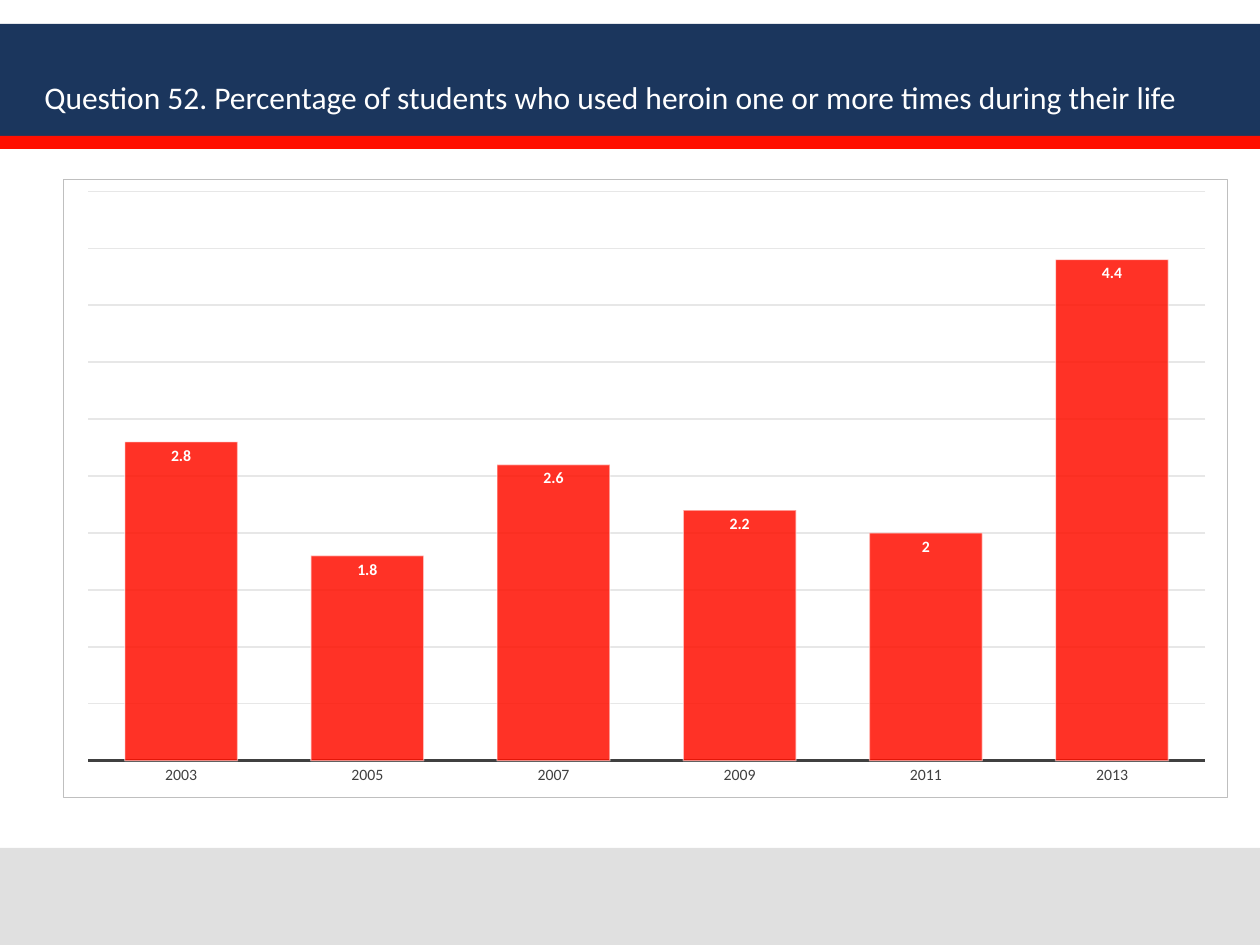
from lxml import etree
from pptx import Presentation
from pptx import util as u
from pptx.chart.data import CategoryChartData
from pptx.dml.color import RGBColor
from pptx.enum import chart as charts, shapes, text
from pptx.oxml import parse_xml
from pptx.oxml.ns import nsdecls, qn

PX = 914400 // 126
FONT = "Calibri"
TITLE = "Question 52. Percentage of students who used heroin one or more times during their life"
TITLE_BOX = (32, 33, 1197, 89)
BANDS = [
    ((0, 24, 1260, 112), "1B365D"),
    ((0, 136, 1260, 13), "FF0F00"),
    ((0, 848, 1260, 97), "E0E0E0"),
]
CHART_BOX = (63, 179, 1165, 619)
PLOT_BOX = (87, 191, 1118, 571)
HEROIN_USE = {"2003": 2.8, "2005": 1.8, "2007": 2.6, "2009": 2.2, "2011": 2, "2013": 4.4}


def emu(box):
    return [value * PX for value in box]


def color(value):
    return RGBColor.from_string(value)


def style_font(font, size, value, bold=False):
    font.name, font.size, font.bold = FONT, u.Pt(size), bold
    font.color.rgb = color(value)


def style_line(line, value, width):
    line.color.rgb = color(value)
    line.width = u.Pt(width)


def add_alpha(fill_parent, percent):
    rgb = fill_parent.find(qn("a:solidFill")).find(qn("a:srgbClr"))
    etree.SubElement(rgb, qn("a:alpha")).set("val", str(percent * 1000))


def add_bands(slide):
    for box, fill in BANDS:
        band = slide.shapes.add_shape(shapes.MSO_SHAPE.RECTANGLE, *emu(box))
        band.shadow.inherit = False
        band.fill.solid()
        band.fill.fore_color.rgb = color(fill)
        band.line.fill.background()


def add_title(slide):
    frame = slide.shapes.add_textbox(*emu(TITLE_BOX)).text_frame
    frame.word_wrap = True
    frame.vertical_anchor = text.MSO_ANCHOR.BOTTOM
    frame.text = TITLE
    style_font(frame.paragraphs[0].runs[0].font, 18, "FFFFFF")


def place_plot(chart):
    left, top, width, height = CHART_BOX
    x, y, w, h = PLOT_BOX
    fractions = {"x": (x - left) / width, "y": (y - top) / height, "w": w / width, "h": h / height}
    parts = [("layoutTarget", "inner"), ("xMode", "edge"), ("yMode", "edge")]
    parts += [(key, f"{value:.3f}") for key, value in fractions.items()]
    plot_area = chart.plots[0]._element.getparent()
    for layout in plot_area.findall(qn("c:layout")):
        plot_area.remove(layout)
    layout = etree.Element(qn("c:layout"))
    manual = etree.SubElement(layout, qn("c:manualLayout"))
    for tag, value in parts:
        etree.SubElement(manual, qn(f"c:{tag}")).set("val", value)
    plot_area.insert(0, layout)


def add_border(chart):
    border = parse_xml(
        f'<c:spPr {nsdecls("c", "a")}><a:solidFill><a:srgbClr val="FFFFFF"/></a:solidFill>'
        '<a:ln w="9525"><a:solidFill><a:srgbClr val="BFBFBF"/></a:solidFill></a:ln></c:spPr>'
    )
    chart._chartSpace.find(qn("c:chart")).addnext(border)


def add_use_chart(slide):
    data = CategoryChartData()
    data.categories = list(HEROIN_USE)
    data.add_series("Series 1", list(HEROIN_USE.values()))
    kind = charts.XL_CHART_TYPE.COLUMN_CLUSTERED
    chart = slide.shapes.add_chart(kind, *emu(CHART_BOX), data).chart
    chart.has_legend = chart.has_title = False
    style_font(chart.font, 10, "000000")

    years = chart.category_axis
    years.major_tick_mark = charts.XL_TICK_MARK.NONE
    style_font(years.tick_labels.font, 9, "404040")
    style_line(years.format.line, "404040", 1.5)

    percent = chart.value_axis
    percent.minimum_scale, percent.maximum_scale, percent.major_unit = 0, 5, 0.5
    percent.has_major_gridlines = True
    style_line(percent.major_gridlines.format.line, "E7E7E7", 0.75)
    percent.visible = False

    plot = chart.plots[0]
    plot.gap_width = 65
    plot.vary_by_categories = False
    bars = plot.series[0]
    bars.format.fill.solid()
    bars.format.fill.fore_color.rgb = color("FF0F00")
    style_line(bars.format.line, "FFFFFF", 0.75)
    bar_style = bars._element.find(qn("c:spPr"))
    add_alpha(bar_style, 85)
    add_alpha(bar_style.find(qn("a:ln")), 50)

    labels = bars.data_labels
    labels.show_value = True
    labels.position = charts.XL_LABEL_POSITION.INSIDE_END
    style_font(labels.font, 9, "FFFFFF", bold=True)
    place_plot(chart)
    add_border(chart)


def main():
    """Build the slide on heroin use among students."""
    deck = Presentation()
    deck.slide_width, deck.slide_height = u.Inches(10), u.Inches(7.5)
    slide = deck.slides.add_slide(deck.slide_layouts[6])
    add_bands(slide)
    add_use_chart(slide)
    add_title(slide)
    deck.save("out.pptx")


if __name__ == "__main__":
    main()
